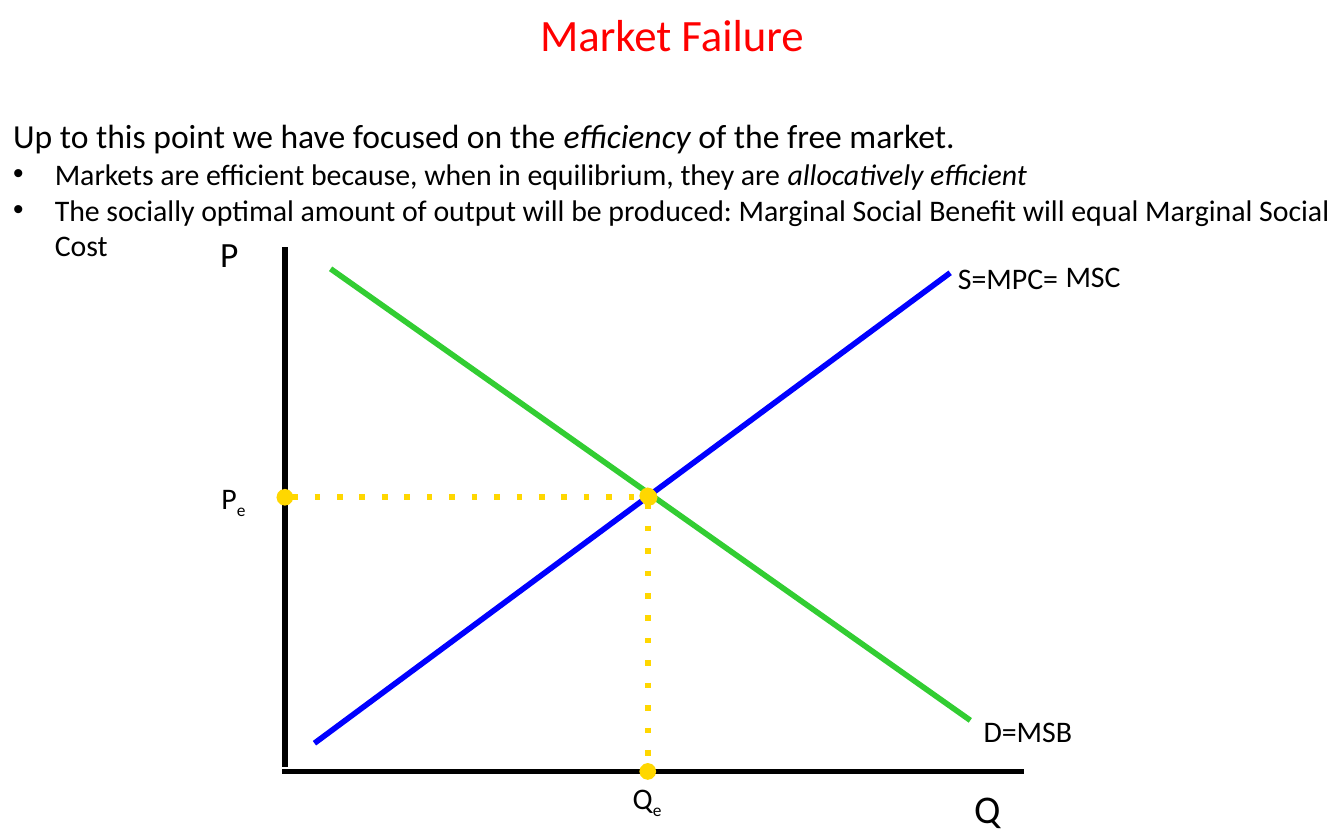
from pptx import Presentation
from pptx.dml.color import RGBColor
from pptx.enum import shapes, text
from pptx.oxml import ns, xmlchemy
from pptx.util import Inches, Pt

COLORS = {
    "title": "FF0000",
    "ink": "000000",
    "demand": "32CD32",
    "supply": "0000FF",
    "equilibrium": "FFD700",
}
FONT = "Calibri"


def add_element(parent, tag, **attributes):
    child = xmlchemy.OxmlElement(tag)
    for name, value in attributes.items():
        child.set(name, value)
    parent.append(child)


def add_span(para, words, size, color="ink", italic=False, subscript=False):
    span = para.add_run()
    span.text = words
    span.font.name = FONT
    span.font.size = Pt(size)
    span.font.italic = italic
    span.font.color.rgb = RGBColor.from_string(COLORS[color])
    if subscript:
        span.font._element.set("baseline", "-25000")


def add_text_box(parts, left, top, width, height):
    box = parts.add_textbox(Inches(left), Inches(top), Inches(width), Inches(height))
    box.text_frame.word_wrap = True
    box.text_frame.vertical_anchor = text.MSO_ANCHOR.TOP
    return box.text_frame


def add_bullet(para):
    properties = para._p.get_or_add_pPr()
    properties.set("marL", str(Inches(0.31)))
    properties.set("indent", str(Inches(-0.31)))
    add_element(properties, "a:buFont", typeface="Arial")
    add_element(properties, "a:buChar", char="•")


def add_line(parts, start, end, color, dotted=False):
    ends = [Inches(value) for value in (*start, *end)]
    line = parts.add_connector(shapes.MSO_CONNECTOR.STRAIGHT, *ends)
    line.line.width = Pt(3)
    line.line.color.rgb = RGBColor.from_string(COLORS[color])
    properties = line.element.spPr
    if dotted:
        outline = properties.find(ns.qn("a:ln"))
        add_element(outline, "a:prstDash", val="dot")
        add_element(outline, "a:headEnd", type="oval")
        add_element(outline, "a:tailEnd", type="oval")
    add_element(properties, "a:effectLst")


def add_introduction(page, left, top, width, height):
    frame = add_text_box(page.shapes, left, top, width, height)
    title = frame.paragraphs[0]
    title.alignment = text.PP_ALIGN.CENTER
    title.space_after = Pt(29.3)
    add_span(title, "Market Failure", 24, "title")

    lead = frame.add_paragraph()
    add_span(lead, "Up to this point we have focused on the ", 18)
    add_span(lead, "efficiency", 18, italic=True)
    add_span(lead, " of the free market.", 18)

    points = [
        [("Markets are efficient because, when in equilibrium, they are ", False),
         ("allocatively efficient", True)],
        [("The socially optimal amount of output will be produced: Marginal "
          "Social Benefit will equal Marginal Social Cost", False)],
    ]
    for point in points:
        para = frame.add_paragraph()
        add_bullet(para)
        for words, italic in point:
            add_span(para, words, 16, italic=italic)


def add_market_diagram(page, left, top):
    parts = page.shapes.add_group_shape().shapes
    lines = [
        ((0.58, 0.16), (0.58, 4.03), "ink", False),
        ((0.56, 4.06), (6.08, 4.06), "ink", False),
        ((0.92, 0.32), (5.68, 3.68), "demand", False),
        ((0.8, 3.85), (5.53, 0.35), "supply", False),
        ((0.58, 2.02), (3.29, 2.02), "equilibrium", True),
        ((3.28, 2.01), (3.28, 4.06), "equilibrium", True),
    ]
    for (x1, y1), (x2, y2), color, dotted in lines:
        add_line(parts, (left + x1, top + y1), (left + x2, top + y2), color, dotted)

    labels = [
        ("P", "", 19, 0, 0, 0.88, 0.57),
        ("Q", "", 21, 5.61, 4.11, 0.82, 0.46),
        ("D=MSB", "", 16, 5.68, 3.57, 1.37, 0.5),
        ("S=MPC=", "", 16, 5.49, 0.2, 1.34, 0.37),
        ("MSC", "", 16, 6.29, 0.19, 1.34, 0.5),
        ("Q", "e", 16, 3.07, 4.07, 0.76, 0.5),
        ("P", "e", 16, 0.01, 1.84, 0.76, 0.5),
    ]
    for words, subscript, size, x, y, width, height in labels:
        frame = add_text_box(parts, left + x, top + y, width, height)
        para = frame.paragraphs[0]
        add_span(para, words, size)
        if subscript:
            add_span(para, subscript, size, subscript=True)


def main():
    deck = Presentation()
    deck.slide_width = Inches(10)
    deck.slide_height = Inches(6.25)
    page = deck.slides.add_slide(deck.slide_layouts[6])
    add_introduction(page, 0, 0, 10, 2.32)
    add_market_diagram(page, 1.54, 1.68)
    deck.save("out.pptx")


if __name__ == "__main__":
    main()
